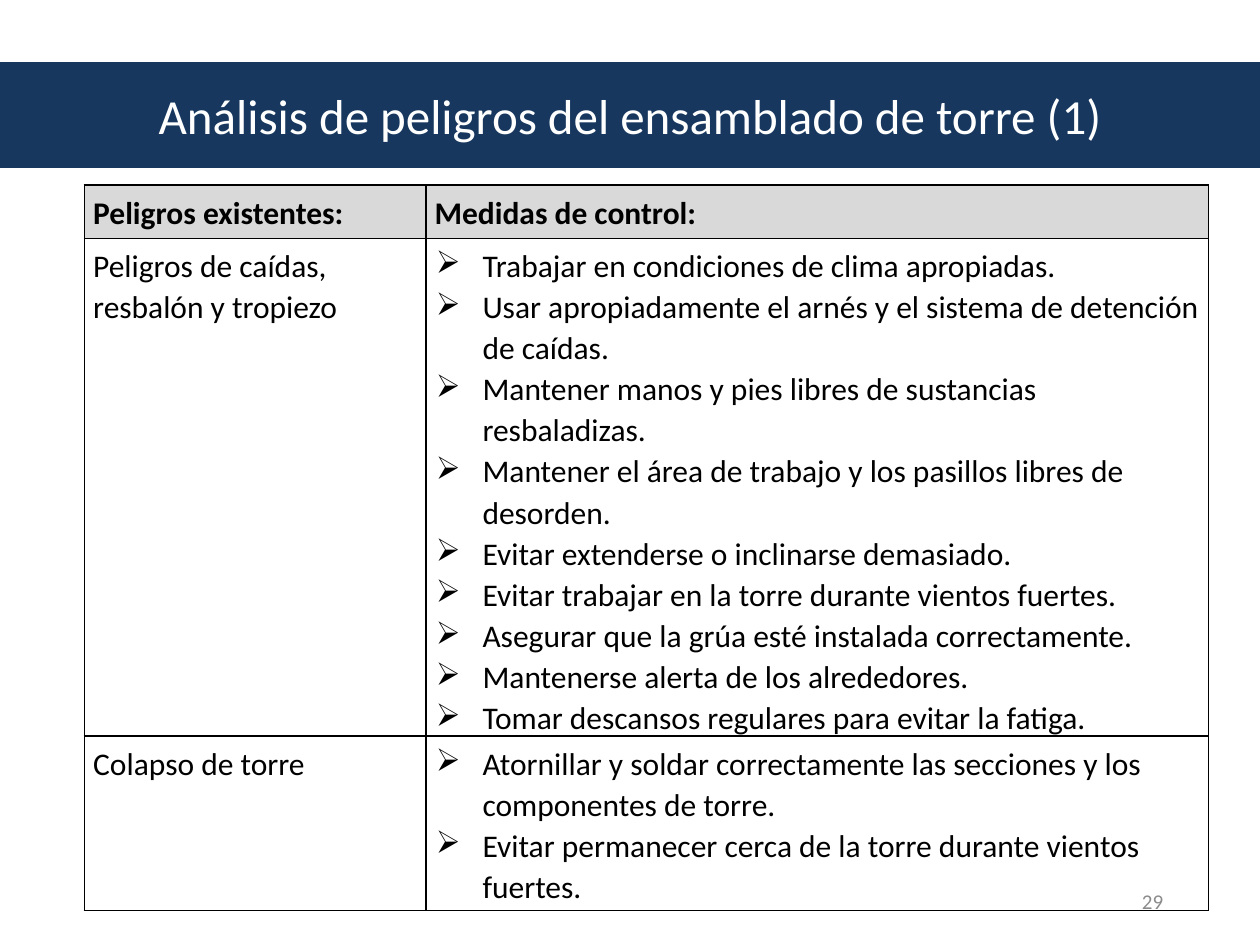
from lxml.etree import SubElement
from pptx import Presentation
from pptx.dml.color import RGBColor
from pptx.enum.shapes import MSO_SHAPE
from pptx.enum.text import MSO_ANCHOR, PP_ALIGN
from pptx.oxml.ns import qn
from pptx.util import Inches, Pt

NAVY = RGBColor(0x17, 0x37, 0x5E)
WHITE = RGBColor(0xFF, 0xFF, 0xFF)
BLACK = RGBColor(0, 0, 0)
HEADER_GRAY = RGBColor(0xD9, 0xD9, 0xD9)
NUMBER_GRAY = RGBColor(0x8B, 0x8B, 0x8B)
FONT = "Calibri"
WIDTH, HEIGHT = Inches(10), Inches(7.5)

COLUMN_SHARES = (2.71 / 8.92, 6.21 / 8.92)
ROW_SHARES = (0.4 / 5.13, 3.5 / 5.13, 1.23 / 5.13)
HEADERS = ("Peligros existentes:", "Medidas de control:")
HAZARDS = (
    ("Peligros de caídas, resbalón y tropiezo", (
        "Trabajar en condiciones de clima apropiadas.",
        "Usar apropiadamente el arnés y el sistema de detención de caídas.",
        "Mantener manos y pies libres de sustancias resbaladizas.",
        "Mantener el área de trabajo y los pasillos libres de desorden.",
        "Evitar extenderse o inclinarse demasiado.",
        "Evitar trabajar en la torre durante vientos fuertes.",
        "Asegurar que la grúa esté instalada correctamente.",
        "Mantenerse alerta de los alrededores.",
        "Tomar descansos regulares para evitar la fatiga.",
    )),
    ("Colapso de torre", (
        "Atornillar y soldar correctamente las secciones y los componentes de torre.",
        "Evitar permanecer cerca de la torre durante vientos fuertes.",
    )),
)


def share_box(left, top, width, height):
    return tuple(int(share * side) for share, side in
                 zip((left, top, width, height), (WIDTH, HEIGHT) * 2))


def add_run(paragraph, text, size, color, bold=False):
    run = paragraph.add_run()
    run.text = text
    run.font.name = FONT
    run.font.size = Pt(size)
    run.font.bold = bold
    run.font.color.rgb = color


def add_label(slide, box, text, size, color, align):
    frame = slide.shapes.add_textbox(*box).text_frame
    frame.word_wrap = True
    frame.vertical_anchor = MSO_ANCHOR.MIDDLE
    frame.paragraphs[0].alignment = align
    add_run(frame.paragraphs[0], text, size, color)


def add_title_band(slide, box, title):
    band = slide.shapes.add_shape(MSO_SHAPE.RECTANGLE, *box)
    band.shadow.inherit = False
    band.fill.solid()
    band.fill.fore_color.rgb = NAVY
    band.line.color.rgb = NAVY
    band.line.width = Pt(0.75)
    left, top, width, height = box
    margin = width // 20
    add_label(slide, (left + margin, top, width - 2 * margin, height),
              title, 28, WHITE, PP_ALIGN.CENTER)


def add_arrow_bullet(paragraph):
    properties = paragraph._p.get_or_add_pPr()
    properties.set("marL", str(Inches(0.38)))
    properties.set("indent", str(-Inches(0.37)))
    bullet_color = SubElement(properties, qn("a:buClr"))
    SubElement(bullet_color, qn("a:srgbClr"), val=str(BLACK))
    SubElement(properties, qn("a:buChar"), char="➢")


def add_borders(cell):
    properties = cell._tc.get_or_add_tcPr()
    for side in ("lnL", "lnR", "lnT", "lnB"):
        border = SubElement(properties, qn(f"a:{side}"), w=str(Pt(0.96)))
        fill = SubElement(border, qn("a:solidFill"))
        SubElement(fill, qn("a:srgbClr"), val=str(BLACK))


def fill_cell(cell, lines, header=False, bulleted=False):
    cell.margin_left = cell.margin_right = Inches(0.07)
    cell.margin_top = cell.margin_bottom = Inches(0.05)
    add_borders(cell)
    if header:
        cell.fill.solid()
        cell.fill.fore_color.rgb = HEADER_GRAY
    else:
        cell.fill.background()
    frame = cell.text_frame
    for index, line in enumerate(lines):
        paragraph = frame.add_paragraph() if index else frame.paragraphs[0]
        paragraph.line_spacing = 1.07
        if bulleted:
            add_arrow_bullet(paragraph)
        add_run(paragraph, line, 18, BLACK, header)


def add_hazard_table(slide, box):
    table = slide.shapes.add_table(
        len(ROW_SHARES), len(COLUMN_SHARES), *box).table
    table.first_row = table.horz_banding = False
    for column, share in zip(table.columns, COLUMN_SHARES):
        column.width = int(box[2] * share)
    for row, share in zip(table.rows, ROW_SHARES):
        row.height = int(box[3] * share)
    for index, header in enumerate(HEADERS):
        fill_cell(table.cell(0, index), (header,), header=True)
    for index, (hazard, controls) in enumerate(HAZARDS, 1):
        fill_cell(table.cell(index, 0), (hazard,))
        fill_cell(table.cell(index, 1), controls, bulleted=True)


def main():
    presentation = Presentation()
    presentation.slide_width, presentation.slide_height = WIDTH, HEIGHT
    slide = presentation.slides.add_slide(presentation.slide_layouts[6])
    add_title_band(slide, share_box(0, 0.5 / 7.5, 1, 0.83 / 7.5),
                   "Análisis de peligros del ensamblado de torre (1)")
    add_hazard_table(slide, share_box(0.067, 1.47 / 7.5, 0.892, 5.13 / 7.5))
    add_label(slide, share_box(0.7, 6.95 / 7.5, 0.233, 0.4 / 7.5),
              "29", 12, NUMBER_GRAY, PP_ALIGN.RIGHT)
    presentation.save("out.pptx")


if __name__ == "__main__":
    main()
